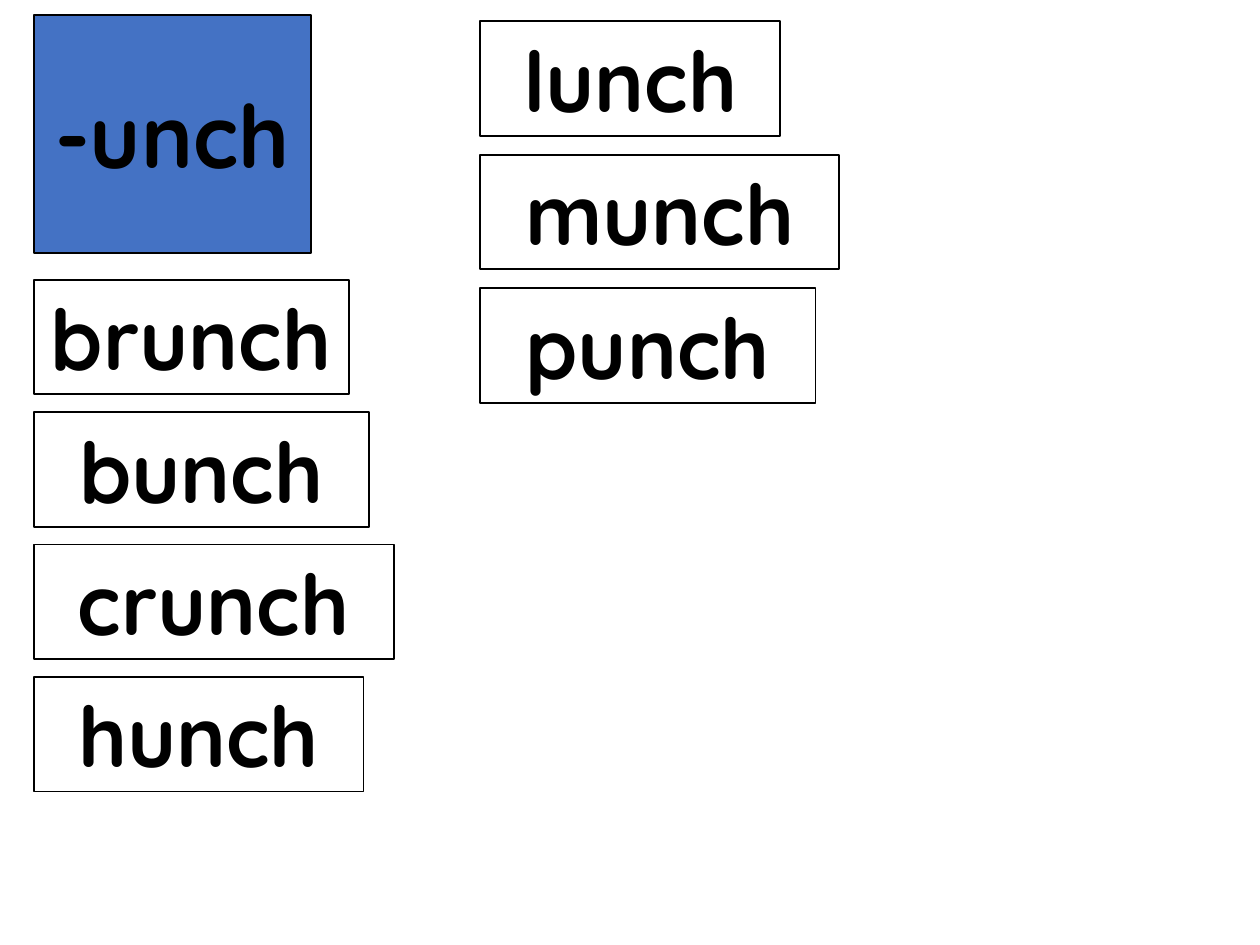
from pptx import Presentation
from pptx.dml.color import RGBColor
from pptx.enum.shapes import MSO_SHAPE
from pptx.enum.text import MSO_ANCHOR, MSO_AUTO_SIZE, PP_ALIGN
from pptx.util import Cm, Pt

RECTANGLE = MSO_SHAPE.RECTANGLE
MIDDLE = MSO_ANCHOR.MIDDLE
CENTER = PP_ALIGN.CENTER
NO_AUTOFIT = MSO_AUTO_SIZE.NONE

COLORS = {"ink": "000000", "card": "FFFFFF", "family": "4472C4"}
FONT = "Quicksand"
CARD_HEIGHT = 2.31

LEFT_WORDS = [("brunch", 6.35), ("bunch", 6.76), ("crunch", 7.26), ("hunch", 6.65)]
RIGHT_WORDS = [("lunch", 6.05), ("munch", 7.24), ("punch", 6.76)]


def color(name):
    return RGBColor.from_string(COLORS[name])


def style_card(card, word, fill, size, wrap):
    card.fill.solid()
    card.fill.fore_color.rgb = color(fill)
    card.line.color.rgb = color("ink")
    card.line.width = Pt(1)
    frame = card.text_frame
    frame.text = word
    frame.word_wrap = wrap
    frame.auto_size = NO_AUTOFIT
    frame.vertical_anchor = MIDDLE
    paragraph = frame.paragraphs[0]
    paragraph.alignment = CENTER
    font = paragraph.runs[0].font
    font.name = FONT
    font.size = Pt(size)
    font.bold = True
    font.color.rgb = color("ink")


def place_family_title(slide, left, top, width, height):
    title = slide.shapes.title
    title.left, title.top = Cm(left), Cm(top)
    title.width, title.height = Cm(width), Cm(height)
    style_card(title, "-unch", "family", 50, True)


def add_word_column(slide, words, left, top, pitch):
    for row, (word, width) in enumerate(words):
        card = slide.shapes.add_shape(
            RECTANGLE, Cm(left), Cm(top + row * pitch), Cm(width), Cm(CARD_HEIGHT)
        )
        card.shadow.inherit = False
        style_card(card, word, "card", 48, False)


def main():
    deck = Presentation()
    deck.slide_width, deck.slide_height = Cm(25.4), Cm(19.05)
    slide = deck.slides.add_slide(deck.slide_layouts[5])
    place_family_title(slide, 0.68, 0.3, 5.59, 4.8)
    add_word_column(slide, LEFT_WORDS, 0.68, 5.64, 2.67)
    add_word_column(slide, RIGHT_WORDS, 9.68, 0.43, 2.69)
    deck.save("out.pptx")


if __name__ == "__main__":
    main()
